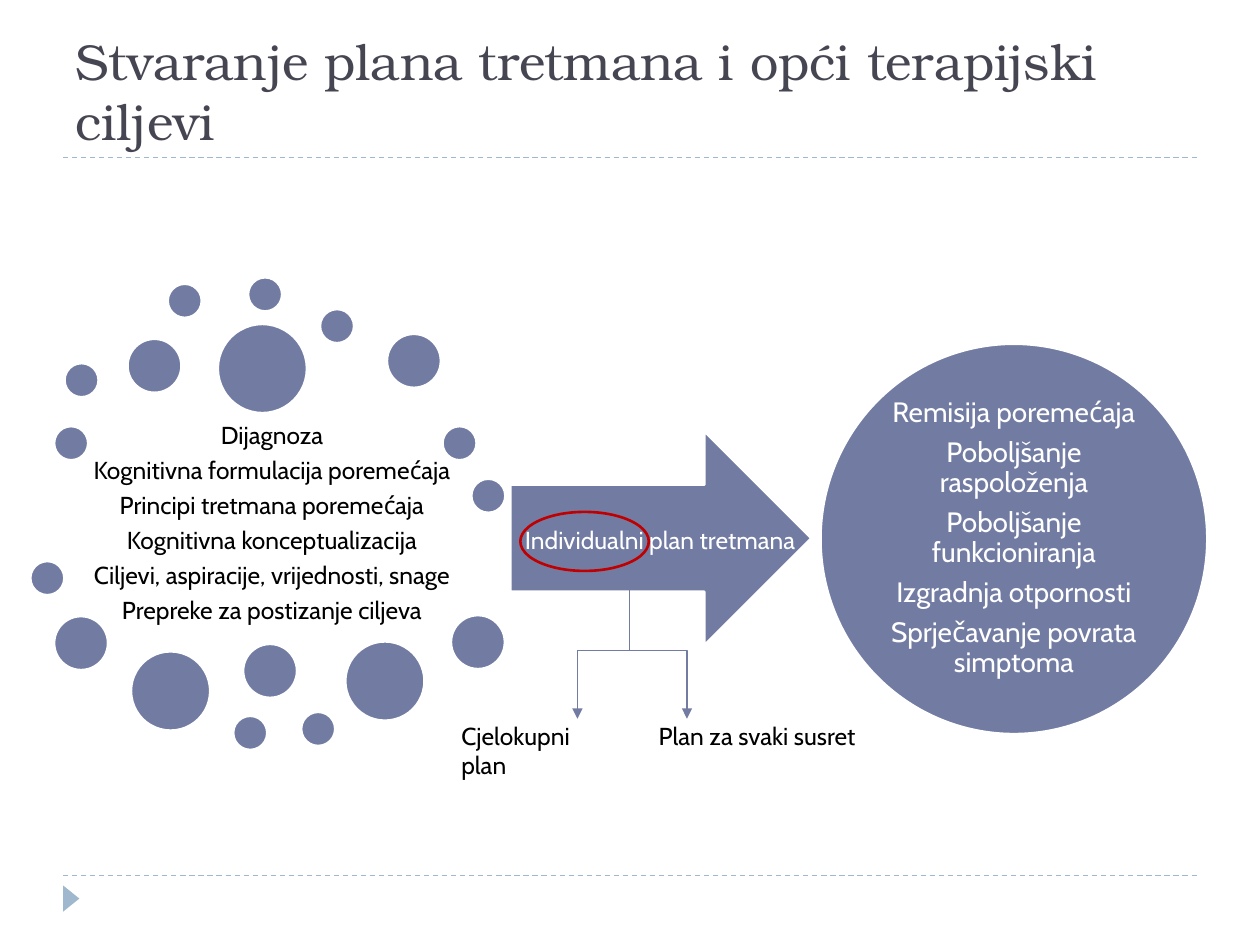
from lxml import etree
from pptx import Presentation
from pptx.dml.color import RGBColor
from pptx.enum.dml import MSO_LINE
from pptx.enum.shapes import MSO_CONNECTOR, MSO_SHAPE
from pptx.enum.text import MSO_ANCHOR, PP_ALIGN
from pptx.oxml.ns import qn
from pptx.util import Cm, Pt

DASH = MSO_LINE.DASH
STRAIGHT, ELBOW = MSO_CONNECTOR.STRAIGHT, MSO_CONNECTOR.ELBOW
OVAL, ARROW = MSO_SHAPE.OVAL, MSO_SHAPE.RIGHT_ARROW
TRIANGLE = MSO_SHAPE.ISOSCELES_TRIANGLE
TOP, MIDDLE, BOTTOM = MSO_ANCHOR.TOP, MSO_ANCHOR.MIDDLE, MSO_ANCHOR.BOTTOM
LEFT, CENTER = PP_ALIGN.LEFT, PP_ALIGN.CENTER

INDIGO = RGBColor(0x72, 0x7C, 0xA3)
PALE_BLUE = RGBColor(0x9F, 0xB8, 0xCD)
SLATE = RGBColor(0x46, 0x46, 0x53)
RED = RGBColor(0xC0, 0x00, 0x00)
BLACK = RGBColor(0, 0, 0)
WHITE = RGBColor(0xFF, 0xFF, 0xFF)
TITLE_FONT, BODY_FONT = "TeX Gyre Bonum", "Cabin"

INPUTS = ["Dijagnoza", "Kognitivna formulacija poremećaja",
          "Principi tretmana poremećaja", "Kognitivna konceptualizacija",
          "Ciljevi, aspiracije, vrijednosti, snage",
          "Prepreke za postizanje ciljeva"]
GOALS = ["Remisija poremećaja", "Poboljšanje raspoloženja",
         "Poboljšanje funkcioniranja", "Izgradnja otpornosti",
         "Sprječavanje povrata simptoma"]
# Dot diameter in cm: top left corners within the cluster
DOTS = {
    0.69: [(0.48, 3), (0.69, 1.73), (2.77, 0.13), (4.39, 0), (5.84, 0.64),
           (8.31, 3), (8.89, 4.06), (0, 5.72), (4.09, 8.84), (5.46, 8.76)],
    1.09: [(1.96, 1.24), (7.19, 1.14), (0.48, 6.83), (4.29, 7.39),
           (8.48, 6.81)],
    1.6: [(2.03, 7.54), (6.35, 7.34)],
    1.8: [(3.78, 0.94)],
}


def add_filled(slide, kind, left, top, width, height, fill=INDIGO):
    shape = slide.shapes.add_shape(kind, left, top, width, height)
    shape.shadow.inherit = False
    shape.fill.solid()
    shape.fill.fore_color.rgb = fill
    shape.line.color.rgb = WHITE
    shape.line.width = Pt(1.5)
    return shape


def add_line(slide, kind, start, end, color):
    line = slide.shapes.add_connector(kind, *start, *end)
    line.line.color.rgb = color
    line.line.width = Pt(0.75)
    etree.SubElement(line._element.spPr, qn("a:effectLst"))
    return line


def add_centered_text(slide, left, top, width, height, lines, size, color,
                      side_inset=0, end_inset=0):
    """Centred paragraphs with tight lines and a third of a line between."""
    frame = slide.shapes.add_textbox(left, top, width, height).text_frame
    frame.word_wrap = True
    frame.vertical_anchor = MIDDLE
    frame.margin_left = frame.margin_right = side_inset
    frame.margin_top = frame.margin_bottom = end_inset
    frame.text = "\n".join(lines)
    for paragraph in frame.paragraphs:
        paragraph.alignment = CENTER
        paragraph.line_spacing = 0.9
        paragraph.space_after = Pt(0.35 * size)
        format_font(paragraph.font, BODY_FONT, size, color)


def format_font(font, name, size, color):
    font.name = name
    font.size = Pt(size)
    font.color.rgb = color


def add_label(slide, left, top, width, text):
    frame = slide.shapes.add_textbox(left, top, width, Cm(0.86)).text_frame
    frame.word_wrap = True
    frame.text = text
    format_font(frame.paragraphs[0].font, BODY_FONT, 14, BLACK)


def add_branch(slide, start, end):
    """Elbow arrow that leaves and arrives vertically."""
    (start_x, start_y), (end_x, end_y) = start, end
    center_x, center_y = (start_x + end_x) // 2, (start_y + end_y) // 2
    half_run, half_drop = abs(end_x - start_x) // 2, (end_y - start_y) // 2
    # The elbow is laid out sideways, then turned to point down.
    side, degrees = (1, 270) if end_x > start_x else (-1, 90)
    line = add_line(slide, ELBOW,
                    (center_x + side * half_drop, center_y - half_run),
                    (center_x - side * half_drop, center_y + half_run), INDIGO)
    line._element.spPr.find(qn("a:xfrm")).set("rot", str(degrees * 60000))
    etree.SubElement(line.line._get_or_add_ln(), qn("a:tailEnd"),
                     type="triangle")


def add_title(slide, left, top, width, height):
    title = slide.shapes.title
    title.left, title.top, title.width, title.height = left, top, width, height
    frame = title.text_frame
    frame.text = "Stvaranje plana tretmana i opći terapijski ciljevi"
    frame.word_wrap = True
    frame.vertical_anchor = BOTTOM
    frame.paragraphs[0].alignment = LEFT
    format_font(frame.paragraphs[0].font, TITLE_FONT, 28.8, SLATE)


def add_page_frame(slide, left, top, width, height):
    """Dashed rules above and below the content, with a corner marker."""
    for y in (top, top + height):
        rule = add_line(slide, STRAIGHT, (left, y), (left + width, y),
                        PALE_BLUE)
        rule.line.dash_style = DASH
    marker = add_filled(slide, TRIANGLE, left - Cm(0.1),
                        top + height + Cm(0.3), Cm(0.53), Cm(0.33), PALE_BLUE)
    marker.rotation = 90
    marker.line.fill.background()


def add_input_cluster(slide, left, top):
    add_centered_text(slide, left + Cm(0.48), top + Cm(2.95), Cm(8.79),
                      Cm(4.04), INPUTS, 14, BLACK, Cm(0.05), Cm(0.05))
    for diameter, corners in DOTS.items():
        for x, y in corners:
            add_filled(slide, OVAL, left + Cm(x), top + Cm(y),
                       Cm(diameter), Cm(diameter))


def add_goal_circle(slide, left, top, width, height):
    add_filled(slide, OVAL, left, top, width, height)
    add_centered_text(slide, left + Cm(1.14), top + Cm(1.14),
                      width - Cm(2.28), height - Cm(2.3), GOALS, 16, WHITE)


def add_plan_arrow(slide, left, top, width, height):
    add_filled(slide, ARROW, left, top, width, height)
    add_centered_text(slide, left - Cm(0.97), top + Cm(0.33), Cm(7.98),
                      Cm(3.81), ["Individualni plan tretmana"], 14, WHITE,
                      end_inset=Cm(0.41))
    highlight = add_filled(slide, OVAL, left + Cm(0.2), top + Cm(1.63),
                           Cm(2.59), Cm(1.19))
    highlight.fill.background()
    highlight.line.color.rgb = RED

    stem = (left + Cm(2.4), top + Cm(3.05))
    for end_x in (3.56, 1.35):
        add_branch(slide, stem, (left + Cm(end_x), top + Cm(5.8)))
    label_top = top + Cm(5.72)
    add_label(slide, left - Cm(1.24), label_top, Cm(3.68), "Cjelokupni plan")
    add_label(slide, left + Cm(2.74), label_top, Cm(5.46),
              "Plan za svaki susret")


def main():
    presentation = Presentation()
    presentation.slide_width, presentation.slide_height = Cm(25.4), Cm(19.05)
    slide = presentation.slides.add_slide(presentation.slide_layouts[5])
    add_page_frame(slide, Cm(1.27), Cm(3.17), Cm(22.86), Cm(14.48))
    add_title(slide, Cm(1.27), Cm(0.43), Cm(22.86), Cm(2.74))
    add_input_cluster(slide, Cm(0.61), Cm(5.59))
    add_goal_circle(slide, Cm(16.54), Cm(6.93), Cm(7.8), Cm(7.87))
    add_plan_arrow(slide, Cm(10.29), Cm(8.69), Cm(6.07), Cm(4.32))
    presentation.save("out.pptx")


if __name__ == "__main__":
    main()
